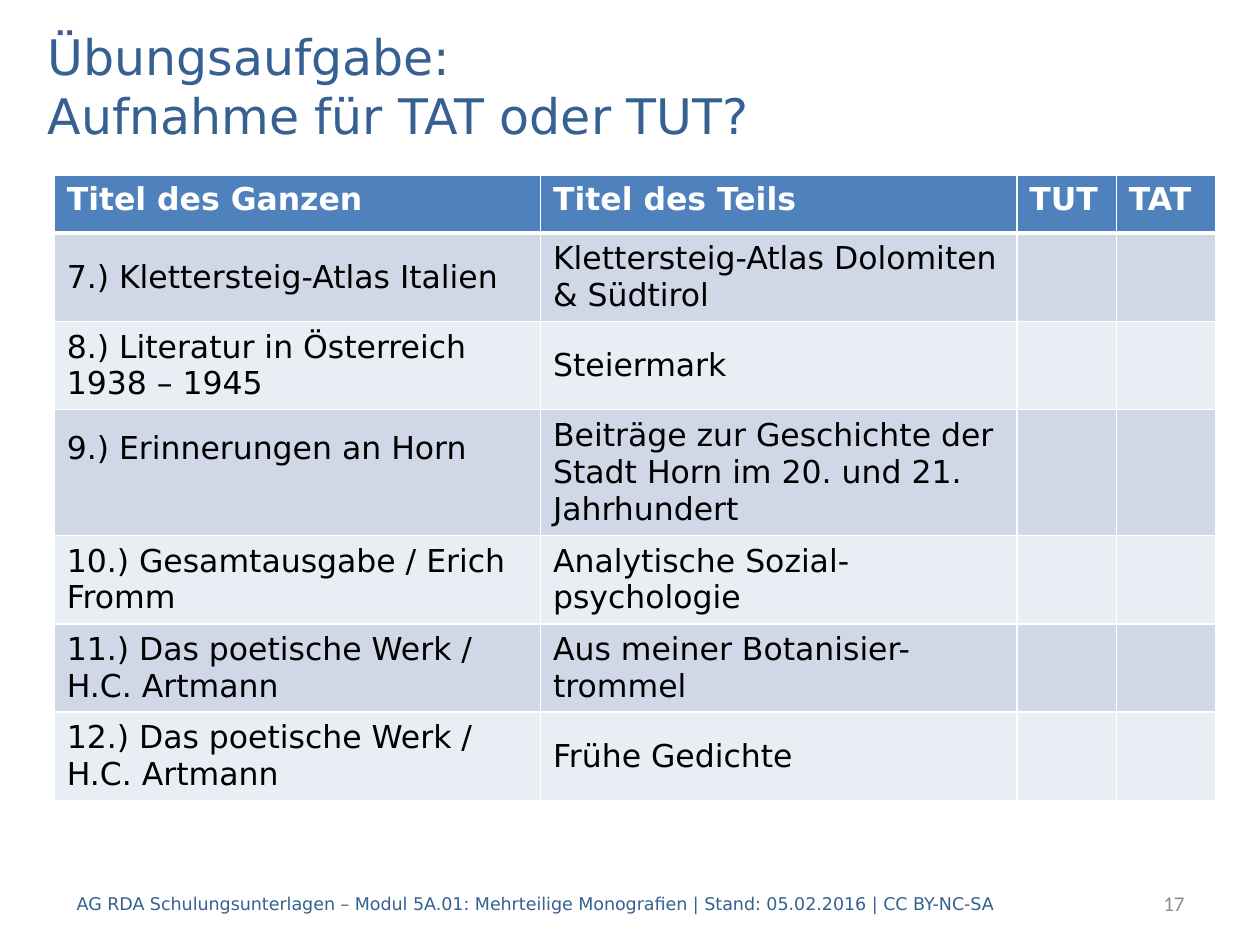
"""Build the exercise slide that asks for TAT or TUT treatment of multipart works."""
import dataclasses

import lxml.etree
import pptx
import pptx.dml.color
import pptx.enum.text
import pptx.oxml.ns
import pptx.util

Inches = pptx.util.Inches
Pt = pptx.util.Pt
Anchor = pptx.enum.text.MSO_ANCHOR
Align = pptx.enum.text.PP_ALIGN

TITLE = ["Übungsaufgabe:", "Aufnahme für TAT oder TUT?"]
FOOTER = ("AG RDA Schulungsunterlagen – Modul 5A.01: Mehrteilige Monografien"
          " | Stand: 05.02.2016 | CC BY-NC-SA")
PAGE_NUMBER = "17"
HEADINGS = ["Titel des Ganzen", "Titel des Teils", "TUT", "TAT"]
WORKS = [
    ("7.) Klettersteig-Atlas Italien", "Klettersteig-Atlas Dolomiten & Südtirol"),
    ("8.) Literatur in Österreich 1938 – 1945", "Steiermark"),
    ("9.) Erinnerungen an Horn",
     "Beiträge zur Geschichte der Stadt Horn im 20. und 21. Jahrhundert"),
    ("10.) Gesamtausgabe / Erich Fromm", "Analytische Sozial-psychologie"),
    ("11.) Das poetische Werk / H.C. Artmann", "Aus meiner Botanisier-trommel"),
    ("12.) Das poetische Werk / H.C. Artmann", "Frühe Gedichte"),
]
COLUMN_WIDTHS = [3.86, 3.78, 0.79, 0.79]
ROW_HEIGHTS = [0.46, 0.68, 0.68, 0.97, 0.68, 0.68, 0.68]
RAISED_CELL = (3, 0)


@dataclasses.dataclass(frozen=True)
class Theme:
    """Fonts, colours and type sizes of the slide."""
    font: str = "DejaVu Sans"
    number_font: str = "Calibri"
    accent: str = "376092"
    grey: str = "8C8C8C"
    header: str = "4F81BD"
    bands: tuple = ("D0D8E8", "E9EDF4")
    white: str = "FFFFFF"
    black: str = "000000"
    title_size: int = 28
    table_size: int = 18
    number_size: int = 12
    footer_size: int = 10


THEME = Theme()


def rgb(code):
    """Turn a hex code into a colour."""
    return pptx.dml.color.RGBColor.from_string(code)


def add_span(para, text, size, color, font=THEME.font, bold=False):
    """Append one formatted run to a paragraph."""
    span = para.add_run()
    span.text = text
    span.font.size = Pt(size)
    span.font.name = font
    span.font.bold = bold
    span.font.color.rgb = rgb(color)


def add_text(page, place, lines, size, color, font=THEME.font, align=Align.LEFT):
    """Add a middle-anchored text box with line breaks between the lines."""
    box = page.shapes.add_textbox(*map(Inches, place))
    frame = box.text_frame
    frame.word_wrap = True
    frame.vertical_anchor = Anchor.MIDDLE
    para = frame.paragraphs[0]
    para.alignment = align
    for index, line in enumerate(lines):
        if index:
            para.add_line_break()
        add_span(para, line, size, color, font)


def set_borders(cell, bottom):
    """Draw white lines around a cell, with the bottom one in its own width."""
    qn = pptx.oxml.ns.qn
    properties = cell._tc.get_or_add_tcPr()
    widths = {"a:lnL": 1, "a:lnR": 1, "a:lnT": 1, "a:lnB": bottom}
    for index, (side, width) in enumerate(widths.items()):
        line = lxml.etree.Element(qn(side), w=str(Pt(width)))
        fill = lxml.etree.SubElement(line, qn("a:solidFill"))
        lxml.etree.SubElement(fill, qn("a:srgbClr"), val=THEME.white)
        properties.insert(index, line)


def fill_cell(cell, text, is_header, fill):
    """Colour, border and fill in one table cell."""
    cell.fill.solid()
    cell.fill.fore_color.rgb = rgb(fill)
    set_borders(cell, 3 if is_header else 1)
    if not text:
        return
    para = cell.text_frame.paragraphs[0]
    if not is_header:
        cell.vertical_anchor = Anchor.MIDDLE
        para.space_before = para.space_after = Pt(6)
    add_span(para, text, THEME.table_size,
             THEME.white if is_header else THEME.black, bold=is_header)


def add_works_table(page):
    """Add the table of works with empty columns for the answers."""
    rows = [HEADINGS] + [(*work, "", "") for work in WORKS]
    table = page.shapes.add_table(
        len(rows), len(HEADINGS), Inches(0.43), Inches(1.39),
        Inches(sum(COLUMN_WIDTHS)), Inches(sum(ROW_HEIGHTS))).table
    for column, width in zip(table.columns, COLUMN_WIDTHS):
        column.width = Inches(width)
    for row, height in zip(table.rows, ROW_HEIGHTS):
        row.height = Inches(height)
    for r, texts in enumerate(rows):
        fill = THEME.bands[(r - 1) % 2] if r else THEME.header
        for c, text in enumerate(texts):
            fill_cell(table.cell(r, c), text, r == 0, fill)
    table.cell(*RAISED_CELL).margin_bottom = Inches(0.43)


def main():
    """Assemble and save the slide."""
    deck = pptx.Presentation()
    deck.slide_width, deck.slide_height = Inches(10), Inches(7.5)
    page = deck.slides.add_slide(deck.slide_layouts[6])
    add_text(page, (0.51, 6.97, 8.35, 0.4), [FOOTER], THEME.footer_size, THEME.accent)
    add_text(page, (7.91, 6.97, 1.59, 0.4), [PAGE_NUMBER], THEME.number_size,
             THEME.grey, THEME.number_font, Align.RIGHT)
    add_works_table(page)
    add_text(page, (0.28, 0.2, 9.45, 0.95), TITLE, THEME.title_size, THEME.accent)
    deck.save("out.pptx")


if __name__ == "__main__":
    main()
